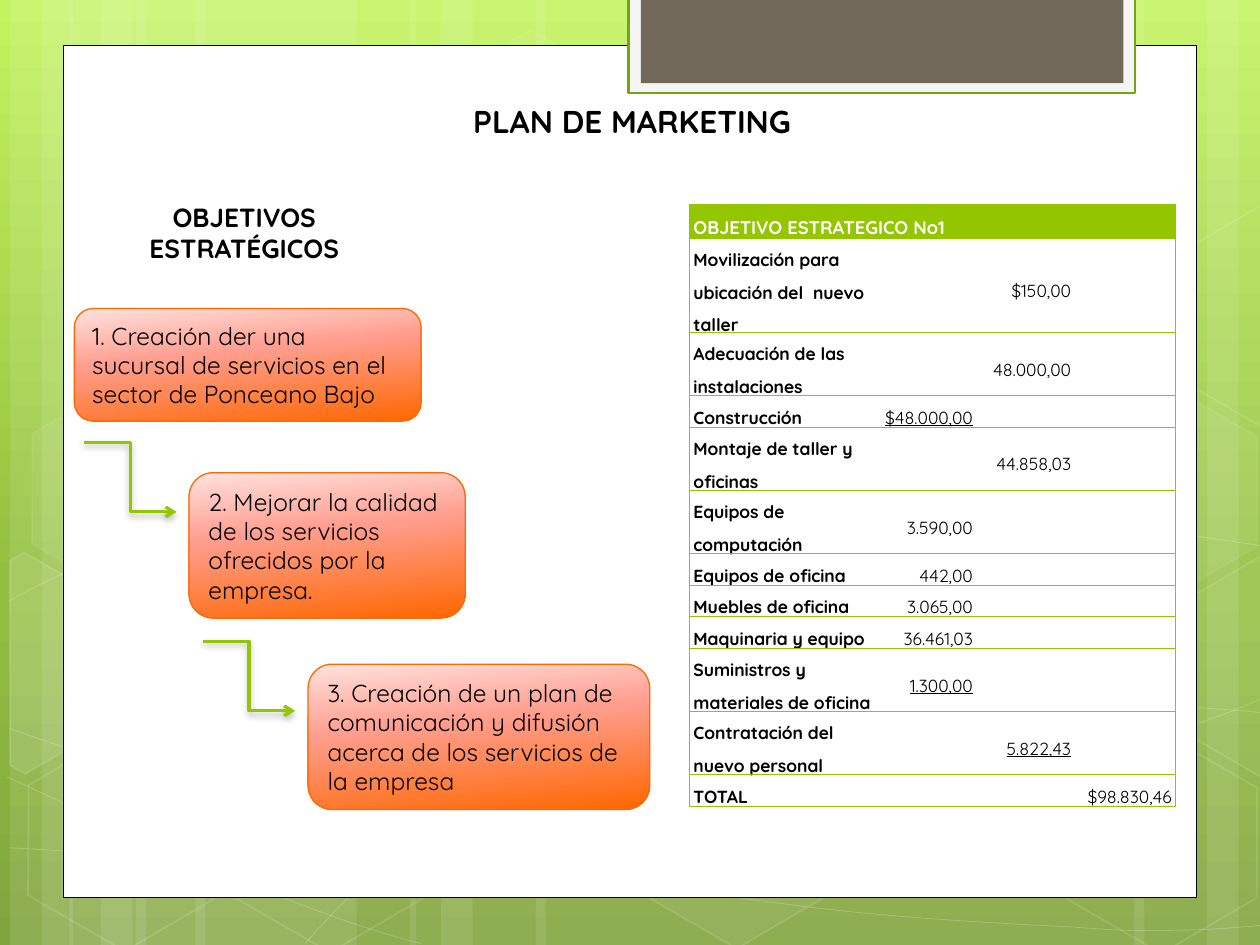
"""Marketing plan slide: strategic objectives beside a budget table."""
from dataclasses import dataclass
from math import cos, radians, sin
from lxml import etree
from pptx import Presentation
from pptx import util as u
from pptx.dml.color import RGBColor
from pptx.enum import shapes, text
from pptx.oxml.ns import qn

@dataclass(frozen=True)
class Theme:
    font: str = "Quicksand"
    black: str = "000000"
    white: str = "FFFFFF"
    green: str = "94C600"
    dark_green: str = "74A510"
    orange: str = "FF6700"
    panel: str = "F5F5F5"
    brown: str = "71685A"
    backdrop: tuple = ((0, "C3F35F"), (62, "93BF3F"), (100, "81A53E"))
    glow: tuple = ((0, "FFE2DE"), (40, "FF9E8F"), (100, "FF6700"))
    title: float = 18
    heading: float = 15
    body: float = 14
    table_head: float = 10.5
    table: float = 10

@dataclass(frozen=True)
class Hexagon:
    left: float
    top: float
    fill: int
    line: int

@dataclass(frozen=True)
class Objective:
    label: str
    box: tuple

@dataclass(frozen=True)
class Cost:
    concept: str
    amount: str
    column: int
    underline: bool = False
    height: float = 0.51

THEME, SHAPE, ALIGN = Theme(), shapes.MSO_SHAPE, text.PP_ALIGN
STRIPES = [(2.74, 4.45), (0.2, 1.27), (0.84, 2.11), (3.94, 4.45), (1.4, 1.27), (2.03, 2.11),
           (18.62, 4.45), (24.33, 1.27), (22.86, 2.11), (10.8, 7.82), (8.26, 1.27), (8.89, 2.11)]
WAVES = [
    [(0.18, 17.09), (1.55, 17.17), (2.92, 17.25), (4.83, 17.22), (6.73, 17.2), (9.09, 17.15), (11.63, 16.89),
     (14.17, 16.64), (17.78, 16.18), (20.12, 15.67), (22.43, 15.19), (24.82, 14.43), (25.58, 14)],
    [(0.18, 12.12), (0.91, 11.71), (1.65, 11.33), (3.07, 10.95), (4.52, 10.52), (6.58, 10.01), (8.81, 9.83),
     (11.07, 9.65), (13.82, 9.63), (16.61, 9.83), (19.41, 10.03), (24.05, 10.82), (25.58, 11.02)],
    [(0.15, 15.67), (3.23, 17.07), (6.27, 18.47), (8.48, 19.02)],
    [(0.18, 14.68), (0.97, 14.96), (1.78, 15.24), (3.25, 15.65), (4.72, 16.03), (6.93, 16.66), (9.07, 17.09),
     (11.18, 17.53), (13.84, 17.98), (15.95, 18.24), (18.06, 18.52), (20.32, 18.62), (21.67, 18.69),
     (22.99, 18.8), (23.34, 18.75), (24, 18.75), (24.66, 18.72), (25.12, 18.69), (25.58, 18.64)],
    [(6.15, 19.02), (6.6, 18.52), (7.06, 18.01), (7.67, 17.55), (8.28, 17.09), (9.14, 16.59), (9.86, 16.23),
     (10.57, 15.88), (11, 15.72), (11.94, 15.47), (12.85, 15.21), (14.55, 14.86), (15.44, 14.68),
     (16.36, 14.5), (16.48, 14.5), (17.27, 14.45), (18.06, 14.38), (19.3, 14.3), (20.17, 14.27),
     (21.06, 14.25), (22.5, 14.27), (22.5, 14.27), (23.07, 14.27), (23.64, 14.27), (24.21, 14.27),
     (24.66, 14.3), (25.1, 14.33), (25.55, 14.38)]]
HEXAGONS = [Hexagon(8.48, 0.91, 4, 8), Hexagon(12.62, 14.96, 6, 12), Hexagon(0.28, 15.01, 0, 12),
            Hexagon(0.36, 7.92, 7, 8), Hexagon(4.42, 15.04, 0, 12), Hexagon(19.13, 11.51, 10, 12),
            Hexagon(21.18, 15.06, 0, 12), Hexagon(21.18, 7.98, 7, 8)]
LEFT_CUT = [(0.2, 11.3), (0.48, 11.13), (2.44, 12.24), (2.41, 14.48), (0.51, 15.6), (0.2, 15.42)]
RIGHT_CUT = [(23.52, 12.32), (25.43, 11.2), (25.63, 11.33), (25.63, 15.57), (25.45, 15.67), (23.52, 14.55)]
OBJECTIVES = [
    Objective("1. Creación der una sucursal de servicios en el sector de Ponceano Bajo", (1.5, 6.22, 6.99, 2.27)),
    Objective("3. Creación de un plan de comunicación y difusión acerca de los servicios de la empresa",
              (6.21, 13.39, 6.89, 2.93)),
    Objective("2. Mejorar la calidad de los servicios ofrecidos por la empresa.", (3.81, 9.53, 5.57, 2.93))]
STEPS = [(1.7, 8.92), (4.09, 12.93)]
COLUMNS = [3.73, 2.06, 1.98, 2.03]
COSTS = [
    Cost("Movilización para ubicación del  nuevo taller", "$150,00", 2, height=0.99),
    Cost("Adecuación de las instalaciones", "48.000,00", 2),
    Cost("Construcción", "$48.000,00", 1, True),
    Cost("Montaje de taller y oficinas", "44.858,03", 2),
    Cost("Equipos de computación", "3.590,00", 1),
    Cost("Equipos de oficina", "442,00", 1),
    Cost("Muebles de oficina", "3.065,00", 1),
    Cost("Maquinaria y equipo", "36.461,03", 1),
    Cost("Suministros y materiales de oficina", "1.300,00", 1, True, 0.99),
    Cost("Contratación del nuevo personal", "5.822,43", 2, True, 0.99),
    Cost("TOTAL", "$98.830,46", 3)]

def add(parent, tag: str, **attributes):
    return etree.SubElement(parent, qn(tag), {key: str(value) for key, value in attributes.items()})

def paint_gradient(owner, fill, stops: tuple, degrees: int) -> None:
    fill.gradient()
    gradient = owner.find(".//" + qn("a:gradFill"))
    for child in list(gradient):
        gradient.remove(child)
    stop_list = add(gradient, "a:gsLst")
    for position, color in stops:
        add(add(stop_list, "a:gs", pos=position * 1000), "a:srgbClr", val=color)
    add(gradient, "a:lin", ang=degrees * 60000, scaled=0)

def paint(shape, fill="", line="", width=0.5, fill_alpha: int = 100, line_alpha: int = 100) -> None:
    shape.shadow.inherit = False
    for part, color, alpha, prefix in ((shape.fill, fill, fill_alpha, ""),
                                       (shape.line.fill, line, line_alpha, qn("a:ln") + "/")):
        if not color or not alpha:
            part.background()
            continue
        part.solid()
        part.fore_color.rgb = RGBColor.from_string(color)
        if alpha < 100:
            tint = shape._element.spPr.find(prefix + qn("a:solidFill") + "/" + qn("a:srgbClr"))
            add(tint, "a:alpha", val=alpha * 1000)
    if line:
        shape.line.width = u.Pt(width)

def place(slide, kind, *box: float):
    return slide.shapes.add_shape(kind, *map(u.Cm, box))

def outline(slide, points: list, close: bool):
    first, *rest = [(u.Cm(x), u.Cm(y)) for x, y in points]
    builder = slide.shapes.build_freeform(*first)
    builder.add_line_segments(rest, close=close)
    return builder.convert_to_shape()

def draw_wave(slide, controls: list) -> None:
    wave = outline(slide, controls, False)
    track = wave._element.find(".//" + qn("a:path"))
    segments = track.findall(qn("a:lnTo"))
    for start in range(0, len(segments), 3):
        bend = add(track, "a:cubicBezTo")
        for segment in segments[start:start + 3]:
            bend.append(segment[0])
            track.remove(segment)
    paint(wave, line=THEME.white, line_alpha=20)

def draw_cut_hexagon(slide, points: list, center_x: float, center_y: float, alpha: int) -> None:
    c, s = cos(radians(30)), sin(radians(30))
    offsets = [(x - center_x, y - center_y) for x, y in points]
    upright = [(center_x + x * c + y * s, center_y - x * s + y * c) for x, y in offsets]
    hexagon = outline(slide, upright, True)
    hexagon.rotation = 30
    paint(hexagon, THEME.white, THEME.white, 1, alpha, 12)

def write(frame, content: str, size: float, color=THEME.black, bold=False, align=ALIGN.LEFT, underline=False) -> None:
    frame.word_wrap = True
    paragraph = frame.paragraphs[0]
    paragraph.text, paragraph.alignment = content, align
    font = paragraph.runs[0].font
    font.name, font.size, font.bold, font.underline = THEME.font, u.Pt(size), bold, underline
    font.color.rgb = RGBColor.from_string(color)

def draw_backdrop(slide) -> None:
    paint_gradient(slide._element, slide.background.fill, THEME.backdrop, 90)
    for left, width in STRIPES:
        paint(place(slide, SHAPE.RECTANGLE, left, 0, width, 19.05), THEME.white, fill_alpha=10)
    for controls in WAVES:
        draw_wave(slide, controls)
    for item in HEXAGONS:
        hexagon = place(slide, SHAPE.HEXAGON, item.left, item.top, 4.45, 3.86)
        hexagon.adjustments[0], hexagon.rotation = 0.285, 30
        paint(hexagon, THEME.white, THEME.white, 1, item.fill, item.line)
    draw_cut_hexagon(slide, LEFT_CUT, 0.91, 13.59, 10)
    for rise, alpha in ((0, 4), (7.07, 0)):
        draw_cut_hexagon(slide, [(x, y - rise) for x, y in RIGHT_CUT], 25.02, 13.21 - rise, alpha)
    paint(place(slide, SHAPE.RECTANGLE, 1.27, 0.91, 22.86, 17.19), THEME.white, THEME.black)
    paint(place(slide, SHAPE.RECTANGLE, 12.67, -0.05, 10.21, 1.93), THEME.panel, THEME.dark_green, 1.25)
    paint(place(slide, SHAPE.RECTANGLE, 12.92, -0.05, 9.73, 1.73), THEME.brown)

def draw_heading(slide, content: str, size: float, *box: float) -> None:
    write(slide.shapes.add_textbox(*map(u.Cm, box)).text_frame, content, size, bold=True, align=ALIGN.CENTER)

def draw_objective(slide, item: Objective) -> None:
    card = place(slide, SHAPE.ROUNDED_RECTANGLE, *item.box)
    paint(card, line=THEME.orange, width=0.75)
    paint_gradient(card._element.spPr, card.fill, THEME.glow, 84)
    write(card.text_frame, item.label, THEME.body)

def draw_step(slide, left: float, top: float) -> None:
    ends = map(u.Cm, (left, top, left + 1.86, top + 1.4))
    step = slide.shapes.add_connector(shapes.MSO_CONNECTOR.ELBOW, *ends)
    step.line.color.rgb, step.line.width = RGBColor.from_string(THEME.green), u.Pt(1.75)
    properties = step._element.spPr
    add(properties.find(qn("a:ln")), "a:tailEnd", type="arrow")
    effects = add(properties, "a:effectLst")
    shadow = add(effects, "a:outerShdw", blurRad=u.Pt(4), dist=u.Pt(2), dir=5400000, rotWithShape=0)
    add(add(shadow, "a:srgbClr", val=THEME.black), "a:alpha", val=28000)

def style_cell(cell, edges: str, fill: str) -> None:
    cell.margin_left = cell.margin_right = u.Cm(0.08)
    cell.margin_top = cell.margin_bottom = 0
    cell.vertical_anchor = text.MSO_ANCHOR.MIDDLE
    for side in "LRTB":
        border = add(cell._tc.get_or_add_tcPr(), f"a:ln{side}", w=u.Pt(0.75))
        paint_tag = add(border, "a:solidFill" if side in edges else "a:noFill")
        if side in edges:
            add(paint_tag, "a:srgbClr", val=THEME.green)
    cell.fill.background()
    if fill:
        cell.fill.solid()
        cell.fill.fore_color.rgb = RGBColor.from_string(fill)
    paragraph = cell.text_frame.paragraphs[0]
    paragraph.line_spacing = 1.5 if paragraph.runs else 1
    if not paragraph.runs:
        add(paragraph._p, "a:endParaRPr", sz=int(THEME.table * 100))

def draw_budget(slide) -> None:
    frame = map(u.Cm, (13.9, 4.13, sum(COLUMNS), 11.81))
    table = slide.shapes.add_table(len(COSTS) + 1, len(COLUMNS), *frame).table
    for column, width in zip(table.columns, COLUMNS):
        column.width = u.Cm(width)
    for row, height in zip(table.rows, [0.53] + [cost.height for cost in COSTS]):
        row.height = u.Cm(height)
    write(table.cell(0, 0).text_frame, "OBJETIVO ESTRATEGICO No1", THEME.table_head, THEME.white, True)
    for row, cost in enumerate(COSTS, 1):
        write(table.cell(row, 0).text_frame, cost.concept, THEME.table, bold=True)
        amount = table.cell(row, cost.column).text_frame
        write(amount, cost.amount, THEME.table, align=ALIGN.RIGHT, underline=cost.underline)
    last = len(COLUMNS) - 1
    for index, cell in enumerate(table.iter_cells()):
        row, column = divmod(index, len(COLUMNS))
        style_cell(cell, "TB" + "L" * (column == 0) + "R" * (column == last), "" if row else THEME.green)
    table.cell(0, 0).merge(table.cell(0, last))
    table.cell(len(COSTS), 0).vertical_anchor = text.MSO_ANCHOR.BOTTOM

def main() -> None:
    deck = Presentation()
    deck.slide_width, deck.slide_height = u.Cm(25.4), u.Cm(19.05)
    slide = deck.slides.add_slide(deck.slide_layouts[6])
    draw_backdrop(slide)
    draw_objective(slide, OBJECTIVES[0])
    draw_heading(slide, "PLAN DE MARKETING", THEME.title, 8.84, 1.93, 7.8, 1.02)
    draw_heading(slide, "OBJETIVOS ESTRATÉGICOS", THEME.heading, 1.75, 3.93, 6.35, 1.55)
    draw_budget(slide)
    for item in OBJECTIVES[1:]:
        draw_objective(slide, item)
    for left, top in STEPS:
        draw_step(slide, left, top)
    deck.save("out.pptx")

if __name__ == "__main__":
    main()
